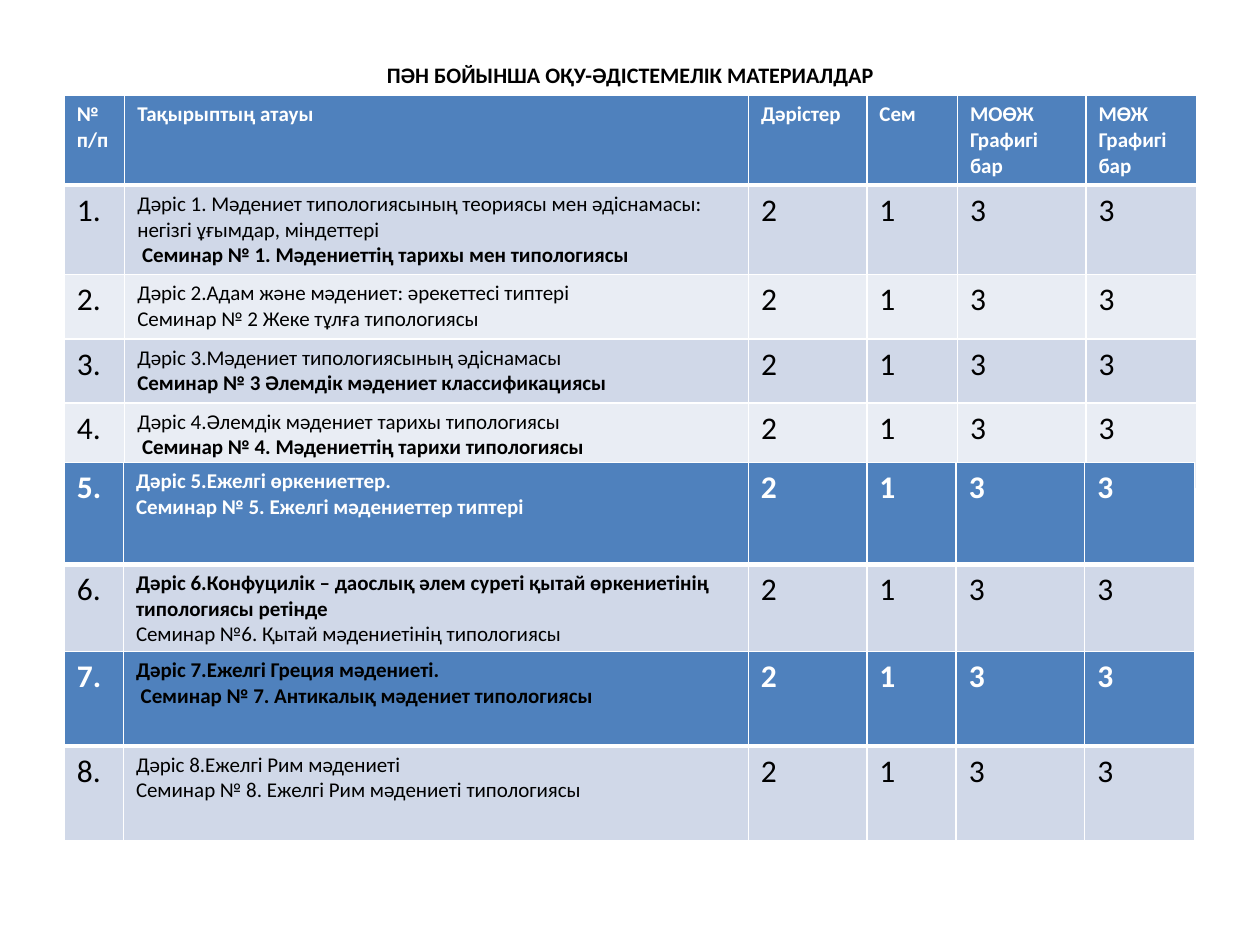
from lxml.etree import SubElement
from pptx import Presentation
from pptx.dml.color import RGBColor
from pptx.enum.text import MSO_ANCHOR, PP_ALIGN
from pptx.oxml.ns import qn
from pptx.util import Inches, Pt

BLACK = RGBColor(0x00, 0x00, 0x00)
WHITE = RGBColor(0xFF, 0xFF, 0xFF)
BLUE = RGBColor(0x4F, 0x81, 0xBD)
BAND_DARK = RGBColor(0xD0, 0xD8, 0xE8)
BAND_LIGHT = RGBColor(0xE9, 0xED, 0xF4)
FONT = "Calibri"

# Content
TITLE = "ПӘН БОЙЫНША ОҚУ-ӘДІСТЕМЕЛІК МАТЕРИАЛДАР"
HEADER = [["№ п/п"], ["Тақырыптың атауы"], ["Дәрістер"], ["Сем"],
          ["МОӨЖ", "Графигі бар"], ["МӨЖ", "Графигі бар"]]
HOURS = ["2", "1", "3", "3"]

# Each topic: lecture, lecture bold, seminar, seminar bold
TOPICS = [
    ("Дәріс 1. Мәдениет типологиясының теориясы мен әдіснамасы: негізгі ұғымдар, міндеттері", False,
     " Семинар № 1. Мәдениеттің тарихы мен типологиясы", True),
    ("Дәріс 2.Адам және мәдениет: әрекеттесі типтері", False,
     "Семинар № 2 Жеке тұлға типологиясы", False),
    ("Дәріс 3.Мәдениет типологиясының әдіснамасы", False,
     "Семинар № 3 Әлемдік мәдениет классификациясы", True),
    ("Дәріс 4.Әлемдік мәдениет тарихы типологиясы", False,
     " Семинар № 4. Мәдениеттің тарихи типологиясы", True),
    ("Дәріс 5.Ежелгі өркениеттер.", True,
     "Семинар № 5. Ежелгі мәдениеттер типтері", True),
    ("Дәріс 6.Конфуцилік – даослық әлем суреті қытай өркениетінің типологиясы ретінде", True,
     "Семинар №6. Қытай мәдениетінің типологиясы", False),
    ("Дәріс 7.Ежелгі Греция мәдениеті.", True,
     " Семинар № 7. Антикалық мәдениет типологиясы", True),
    ("Дәріс 8.Ежелгі Рим мәдениеті", False,
     "Семинар № 8. Ежелгі Рим мәдениеті типологиясы", False),
]
BLACK_TOPIC_ON_BLUE = 7

# Layout: three stacked tables, each with a blue first row
LEFT = 0.51
WIDE_COLUMNS = [0.48, 4.95, 0.94, 0.72, 1.02, 0.88]
NARROW_COLUMNS = [0.47, 4.96, 0.94, 0.71, 1.02, 0.87]
TABLES = [
    # top, columns, row heights, row numbers (0 is the header)
    (0.76, WIDE_COLUMNS, [0.71, 0.71, 0.51, 0.51, 0.68], range(0, 5)),
    (3.67, NARROW_COLUMNS, [0.81, 0.99], range(5, 7)),
    (5.17, NARROW_COLUMNS, [0.75, 0.75], range(7, 9)),
]


def row_content(number, color):
    """Return the cells of a row as lists of (text, size, bold, color)."""
    if number == 0:
        return [[(line, 12, True, color) for line in lines] for lines in HEADER]
    lecture, lecture_bold, seminar, seminar_bold = TOPICS[number - 1]
    topic_color = BLACK if number == BLACK_TOPIC_ON_BLUE else color
    figure_bold = color == WHITE
    figures = [[(text, 18, figure_bold, color)] for text in [f"{number}."] + HOURS]
    topic = [(lecture, 12, lecture_bold, topic_color),
             (seminar, 12, seminar_bold, topic_color)]
    return [figures[0], topic] + figures[1:]


def set_borders(cell, top, bottom):
    properties = cell._tc.get_or_add_tcPr()
    for side, width in (("L", 1), ("R", 1), ("T", top), ("B", bottom)):
        line = SubElement(properties, qn(f"a:ln{side}"), w=str(Pt(width)))
        fill = SubElement(line, qn("a:solidFill"))
        SubElement(fill, qn("a:srgbClr"), val=str(WHITE))


def fill_cell(cell, lines):
    frame = cell.text_frame
    for index, (text, size, bold, color) in enumerate(lines):
        paragraph = frame.paragraphs[0] if index == 0 else frame.add_paragraph()
        paragraph.text = text
        font = paragraph.font
        font.name, font.size, font.bold = FONT, Pt(size), bold
        font.color.rgb = color


def add_topic_table(slide, top, columns, heights, numbers):
    frame = slide.shapes.add_table(len(heights), len(columns), Inches(LEFT), Inches(top),
                                   Inches(sum(columns)), Inches(sum(heights)))
    table = frame.table
    for column, width in zip(table.columns, columns):
        column.width = Inches(width)
    for index, (row, height, number) in enumerate(zip(table.rows, heights, numbers)):
        row.height = Inches(height)
        if index == 0:
            background, color = BLUE, WHITE
        else:
            background, color = (BAND_DARK if index % 2 else BAND_LIGHT), BLACK
        for cell, lines in zip(row.cells, row_content(number, color)):
            # A thick rule parts the blue row from the rest
            set_borders(cell, 3 if index == 1 else 1, 3 if index == 0 else 1)
            cell.fill.solid()
            cell.fill.fore_color.rgb = background
            fill_cell(cell, lines)


def main():
    presentation = Presentation()
    presentation.slide_width, presentation.slide_height = Inches(10), Inches(7.5)
    slide = presentation.slides.add_slide(presentation.slide_layouts[5])

    # Title
    title = slide.shapes.title
    title.left, title.top = Inches(0.5), Inches(0.3)
    title.width, title.height = Inches(9), Inches(0.54)
    frame = title.text_frame
    frame.vertical_anchor = MSO_ANCHOR.MIDDLE
    frame.margin_top, frame.margin_bottom = Inches(0.1), Inches(0.05)
    paragraph = frame.paragraphs[0]
    paragraph.text = TITLE
    paragraph.alignment = PP_ALIGN.CENTER
    font = paragraph.font
    font.name, font.size, font.bold = FONT, Pt(12.6), True
    font.color.rgb = BLACK

    # Tables
    for top, columns, heights, numbers in TABLES:
        add_topic_table(slide, top, columns, heights, numbers)

    presentation.save("out.pptx")


if __name__ == "__main__":
    main()
